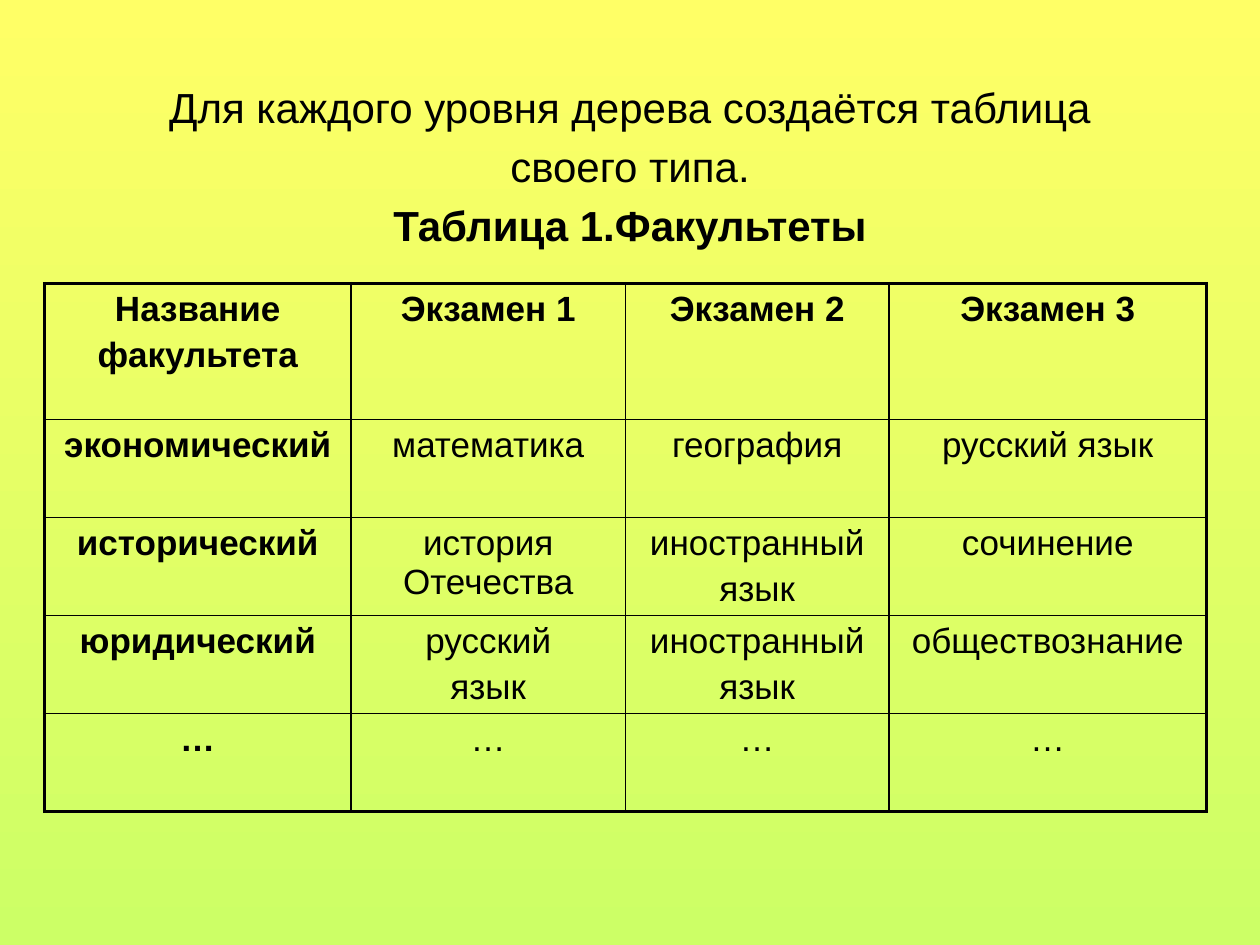
from dataclasses import dataclass

from lxml.etree import SubElement
from pptx import Presentation
from pptx.dml.color import RGBColor
from pptx.enum.text import MSO_ANCHOR, MSO_AUTO_SIZE, PP_ALIGN
from pptx.oxml.ns import qn
from pptx.util import Pt


@dataclass(frozen=True)
class Theme:
    font: str = "Arial"
    ink: RGBColor = RGBColor(0, 0, 0)
    sky: RGBColor = RGBColor(0xFF, 0xFF, 0x66)
    ground: RGBColor = RGBColor(0xCC, 0xFF, 0x66)
    heading_size: float = 24
    table_size: float = 20
    spacing: float = 0.2
    frame_width: float = 2.25
    grid_width: float = 1


THEME = Theme()

HEADING = [
    "Для каждого уровня дерева создаётся таблица",
    "своего типа.",
    "Таблица 1.Факультеты",
]
EXAMS = [
    ["Название\nфакультета", "Экзамен 1", "Экзамен 2", "Экзамен 3"],
    ["экономический", "математика", "география", "русский язык"],
    ["исторический", "история Отечества", "иностранный\nязык", "сочинение"],
    ["юридический", "русский\nязык", "иностранный\nязык", "обществознание"],
    ["…", "…", "…", "…"],
]
COLUMN_WIDTHS = [175, 157, 150.5, 181.5]
ROW_HEIGHTS = [77.75] + [56] * 4


def apply_format(target, values):
    for attribute, value in values.items():
        setattr(target, attribute, value)


def write_lines(frame, lines, size, bold_lines):
    """Write one centred paragraph per line, with those numbered in bold_lines bold."""
    frame.text = "\n".join(lines)
    for number, paragraph in enumerate(frame.paragraphs):
        apply_format(paragraph, {
            "alignment": PP_ALIGN.CENTER,
            "line_spacing": 1.0,
            "space_before": Pt(size * THEME.spacing),
        })
        font = paragraph.runs[0].font
        apply_format(font, {
            "name": THEME.font,
            "size": Pt(size),
            "bold": number in bold_lines,
        })
        font.color.rgb = THEME.ink


def paint_background(slide):
    fill = slide.background.fill
    fill.gradient()
    fill.gradient_angle = 270
    for stop, color in zip(fill.gradient_stops, (THEME.sky, THEME.ground)):
        stop.color.rgb = color


def add_heading(slide):
    heading = slide.shapes.title
    apply_format(heading, {
        "left": Pt(36), "top": Pt(43), "width": Pt(648), "height": Pt(107.5),
    })
    apply_format(heading.text_frame, {
        "word_wrap": True,
        "auto_size": MSO_AUTO_SIZE.NONE,
        "vertical_anchor": MSO_ANCHOR.TOP,
    })
    write_lines(heading.text_frame, HEADING, THEME.heading_size,
                bold_lines={len(HEADING) - 1})


def draw_borders(cell, outer_sides):
    """Rule all four sides, with the heavier frame line on the outer ones."""
    properties = cell._tc.get_or_add_tcPr()
    for position, side in enumerate(("L", "R", "T", "B")):
        width = THEME.frame_width if side in outer_sides else THEME.grid_width
        line = properties.makeelement(qn(f"a:ln{side}"), {"w": str(Pt(width))})
        properties.insert(position, line)
        solid = SubElement(line, qn("a:solidFill"))
        SubElement(solid, qn("a:srgbClr"), val=str(THEME.ink))


def add_exam_table(slide):
    row_count, column_count = len(ROW_HEIGHTS), len(COLUMN_WIDTHS)
    table = slide.shapes.add_table(
        row_count, column_count, Pt(25.5), Pt(162),
        Pt(sum(COLUMN_WIDTHS)), Pt(sum(ROW_HEIGHTS))).table
    apply_format(table, {"first_row": False, "horz_banding": False})
    for column, width in zip(table.columns, COLUMN_WIDTHS):
        column.width = Pt(width)
    for row, height in zip(table.rows, ROW_HEIGHTS):
        row.height = Pt(height)

    for r, exam_row in enumerate(EXAMS):
        for c, content in enumerate(exam_row):
            cell = table.cell(r, c)
            cell.fill.background()
            lines = content.split("\n")
            is_header = r == 0 or c == 0
            write_lines(cell.text_frame, lines, THEME.table_size,
                        bold_lines=range(len(lines)) if is_header else ())
            edges = {"L": c == 0, "R": c == column_count - 1,
                     "T": r == 0, "B": r == row_count - 1}
            draw_borders(cell, {side for side, outer in edges.items() if outer})


def main():
    deck = Presentation()
    apply_format(deck, {"slide_width": Pt(720), "slide_height": Pt(540)})
    slide = deck.slides.add_slide(deck.slide_layouts.get_by_name("Title Only"))
    paint_background(slide)
    add_heading(slide)
    add_exam_table(slide)
    deck.save("out.pptx")


if __name__ == "__main__":
    main()
